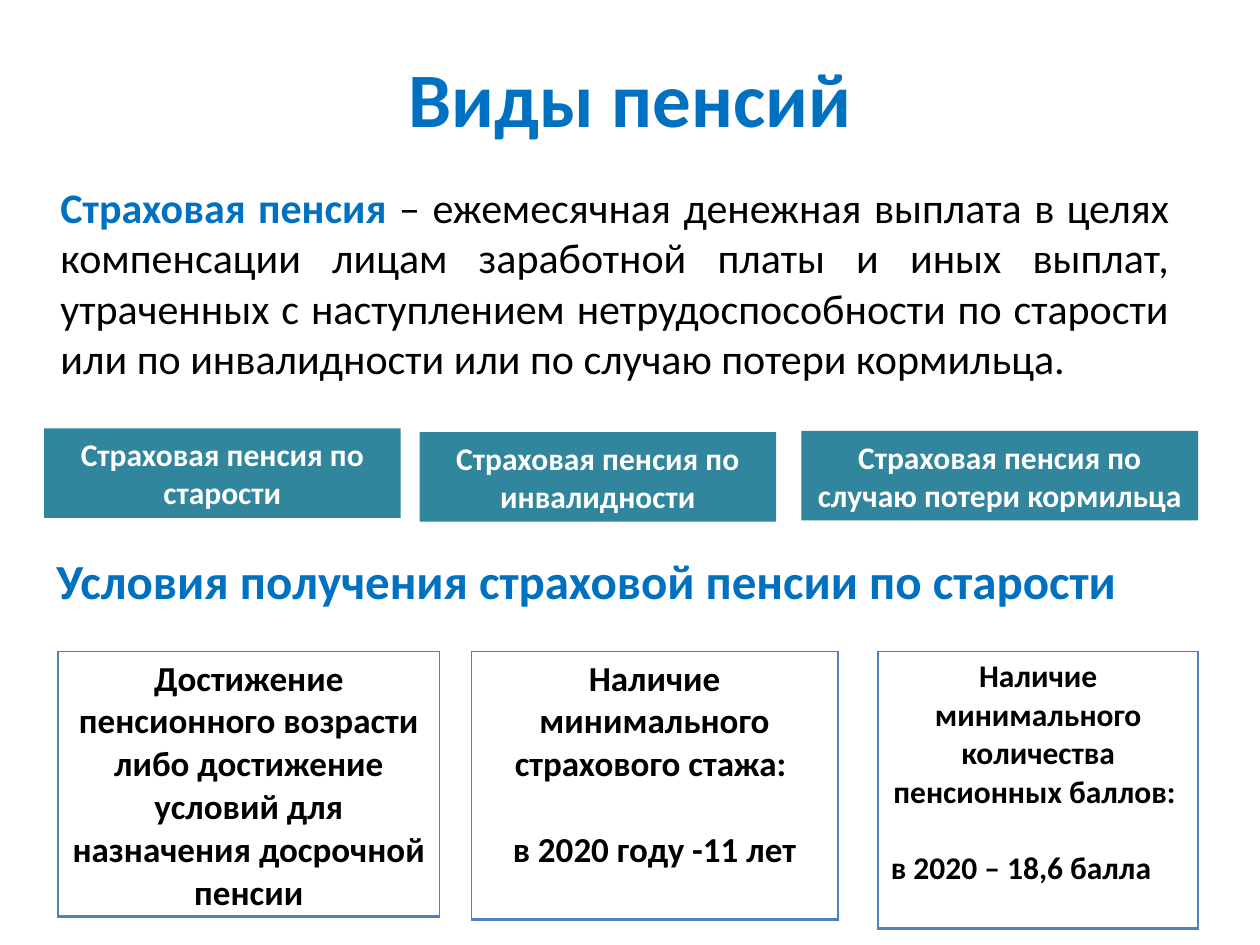
from lxml.etree import SubElement
from pptx import Presentation
from pptx.dml.color import RGBColor
from pptx.enum.shapes import MSO_SHAPE
from pptx.enum.text import MSO_ANCHOR, MSO_AUTO_SIZE, PP_ALIGN
from pptx.oxml import parse_xml
from pptx.oxml.ns import nsdecls, qn
from pptx.util import Inches, Pt

COLORS = {
    "heading": "0070C0",
    "text": "000000",
    "label": "FFFFFF",
    "label_fill": "31859C",
    "border": "4F81BD",
}
FONT = "Calibri"


def add_text(p, text, size=18, color="text", bold=True, align=None, before=None):
    r = p.add_run()
    r.text = text
    r.font.name = FONT
    r.font.size = Pt(size)
    r.font.bold = bold
    r.font.color.rgb = RGBColor.from_string(COLORS[color])
    if align is not None:
        p.alignment = align
    if before is not None:
        p.space_before = Pt(before)


def place(sp, x, y, w, h):
    sp.left, sp.top, sp.width, sp.height = map(Inches, (x, y, w, h))


def fill_title(s):
    sp = s.shapes.title
    place(sp, 0.5, 0.3, 9, 0.93)
    tf = sp.text_frame
    tf.auto_size = MSO_AUTO_SIZE.NONE
    tf.vertical_anchor = MSO_ANCHOR.MIDDLE
    add_text(tf.paragraphs[0], "Виды пенсий", size=44, color="heading",
             align=PP_ALIGN.CENTER)


def fill_definition(s):
    sp = s.placeholders[1]
    place(sp, 0.38, 1.39, 9, 1.76)
    tf = sp.text_frame
    tf.auto_size = MSO_AUTO_SIZE.NONE
    p = tf.paragraphs[0]
    pPr = p._p.get_or_add_pPr()
    pPr.set("marL", "0")
    pPr.set("indent", "0")
    SubElement(pPr, qn("a:buNone"))
    add_text(p, "Страховая пенсия ", size=24, color="heading",
             align=PP_ALIGN.JUSTIFY)
    add_text(p, "– ежемесячная денежная выплата в целях компенсации лицам "
             "заработной платы и иных выплат, утраченных с наступлением "
             "нетрудоспособности по старости или по инвалидности или по "
             "случаю потери кормильца. ", size=24, bold=False)


def add_label(s, text, x, y, w):
    sp = s.shapes.add_shape(MSO_SHAPE.RECTANGLE, Inches(x), Inches(y),
                            Inches(w), Inches(0.71))
    sp.shadow.inherit = False
    sp.fill.solid()
    sp.fill.fore_color.rgb = RGBColor.from_string(COLORS["label_fill"])
    sp.line.fill.background()
    tf = sp.text_frame
    tf.word_wrap = True
    add_text(tf.paragraphs[0], text, color="label", align=PP_ALIGN.CENTER)


def add_subheading(s, text):
    sp = s.shapes.add_textbox(Inches(0.35), Inches(4.32), Inches(8.9), Inches(0.57))
    tf = sp.text_frame
    tf.word_wrap = True
    add_text(tf.paragraphs[0], text, size=28, color="heading")


def set_borders(cell):
    """Outline the cell, with a heavier bottom edge."""
    tcPr = cell._tc.get_or_add_tcPr()
    for i, (side, width) in enumerate((("L", 1), ("R", 1), ("T", 1), ("B", 2))):
        tcPr.insert(i, parse_xml(
            f'<a:ln{side} {nsdecls("a")} w="{Pt(width)}"><a:solidFill>'
            f'<a:srgbClr val="{COLORS["border"]}"/></a:solidFill></a:ln{side}>'))


def add_condition(s, x, w, h, size, paragraphs):
    """Add a one-cell table; paragraphs are (text, alignment) pairs."""
    table = s.shapes.add_table(1, 1, Inches(x), Inches(5.17),
                               Inches(w), Inches(h)).table
    table.first_row = table.horz_banding = False
    cell = table.cell(0, 0)
    cell.fill.background()
    set_borders(cell)
    tf = cell.text_frame
    for i, (text, align) in enumerate(paragraphs):
        p = tf.add_paragraph() if i else tf.paragraphs[0]
        add_text(p, text, size=size, align=align,
                 before=size * 1.22 if i else 0)


def main():
    prs = Presentation()
    prs.slide_width, prs.slide_height = Inches(10), Inches(7.5)
    s = prs.slides.add_slide(prs.slide_layouts[1])
    fill_title(s)
    fill_definition(s)

    for reason, x, y, w in (
        ("старости", 0.35, 3.4, 2.83),
        ("инвалидности", 3.33, 3.43, 2.83),
        ("случаю потери кормильца", 6.36, 3.42, 3.15),
    ):
        add_label(s, f"Страховая пенсия по {reason}", x, y, w)

    add_subheading(s, "Условия получения страховой пенсии по старости")

    center, left = PP_ALIGN.CENTER, PP_ALIGN.LEFT
    add_condition(s, 0.46, 3.03, 2.1, 20, [
        ("Достижение пенсионного возрасти либо достижение условий для "
         "назначения досрочной пенсии", center)])
    add_condition(s, 3.74, 2.91, 2.13, 20, [
        ("Наличие минимального страхового стажа: ", center),
        ("в 2020 году -11 лет", center)])
    add_condition(s, 6.97, 2.54, 2.2, 18, [
        ("Наличие минимального количества пенсионных баллов: ", center),
        ("в 2020 – 18,6 балла", left)])

    prs.save("out.pptx")


if __name__ == "__main__":
    main()
